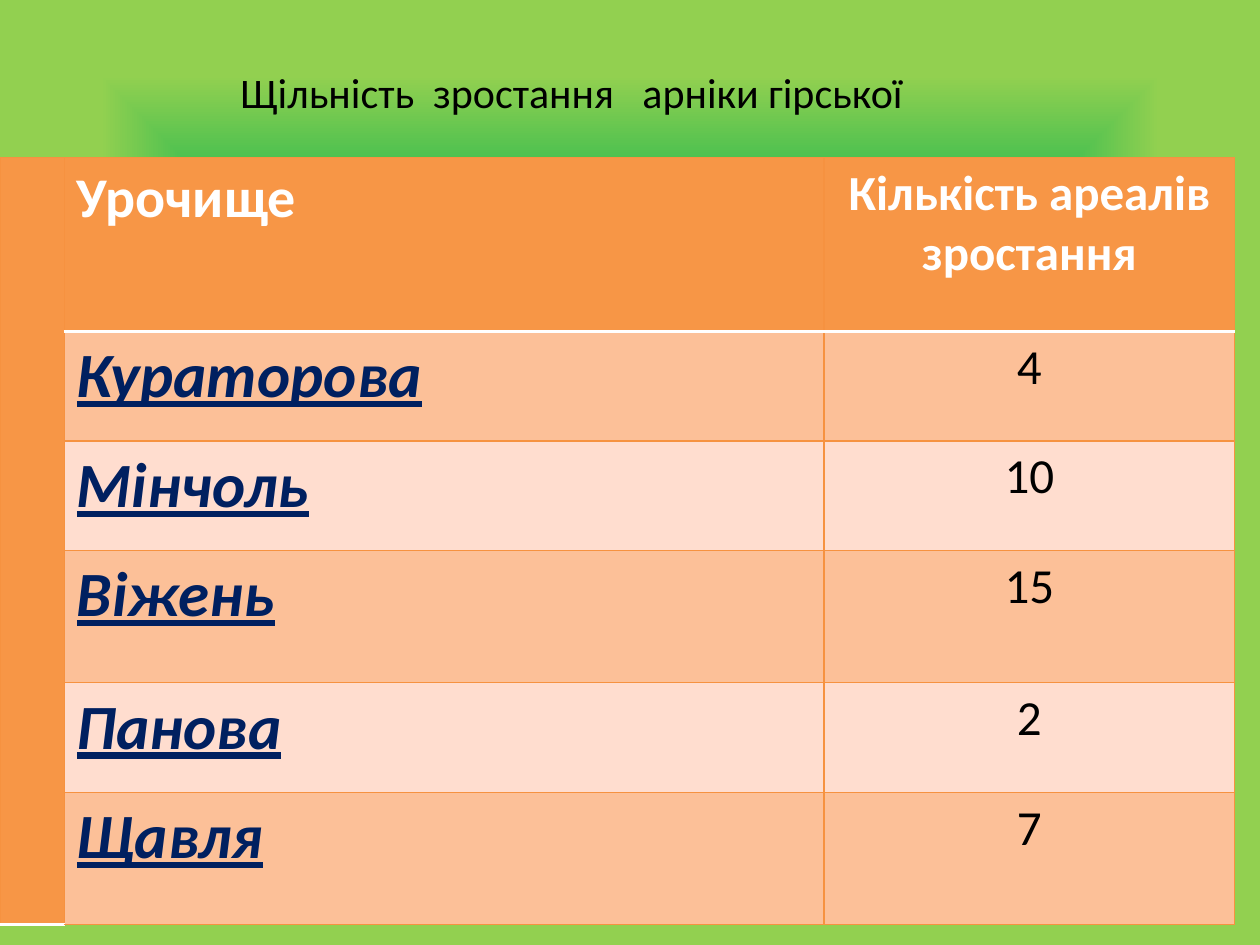
"""Build the slide with a table of mountain arnica habitats by locality."""
from pptx import Presentation
from pptx.dml.color import RGBColor
from pptx.enum.text import MSO_ANCHOR, PP_ALIGN
from pptx.oxml import parse_xml
from pptx.oxml.ns import nsdecls, qn
from pptx.util import Inches, Pt

COLORS = {
    "pale": "DDEBCF", "green": "00B050", "lime": "92D050",
    "orange": "F79646", "border": "F69240", "peach": "FCC098", "light": "FFDDCF",
    "white": "FFFFFF", "navy": "002060", "black": "000000",
}
HEADINGS = ["Урочище", "Кількість ареалів зростання"]
HABITATS = [("Кураторова", 4), ("Мінчоль", 10), ("Віжень", 15), ("Панова", 2), ("Щавля", 7)]
COLUMN_WIDTHS = [0.51, 6.03, 3.26]
ROW_HEIGHTS = [1.38, 0.87, 0.87, 1.05, 0.87, 1.05]
HEADING_FORMATS = [
    {"size": Pt(32), "bold": True, "italic": False, "underline": False},
    {"size": Pt(28), "bold": True, "italic": False, "underline": False},
]
BODY_FORMATS = [
    {"size": Pt(36), "bold": True, "italic": True, "underline": True},
    {"size": Pt(28), "bold": False, "italic": False, "underline": False},
]


def write(frame, text, color, align, formats):
    frame.text = text
    paragraph = frame.paragraphs[0]
    paragraph.alignment = align
    font = paragraph.runs[0].font
    font.name = "Calibri"
    font.color.rgb = RGBColor.from_string(COLORS[color])
    for attribute, value in formats.items():
        setattr(font, attribute, value)


def style_cell(cell, fill, borders):
    properties = cell._tc.get_or_add_tcPr()
    for side in "LRTB":
        color, width = borders.get(side, ("border", 0.75))
        properties.append(parse_xml(
            f'<a:ln{side} {nsdecls("a")} w="{Pt(width)}"><a:solidFill>'
            f'<a:srgbClr val="{COLORS[color]}"/></a:solidFill></a:ln{side}>'))
    cell.fill.solid()
    cell.fill.fore_color.rgb = RGBColor.from_string(COLORS[fill])


presentation = Presentation()
presentation.slide_width = Inches(10)
presentation.slide_height = Inches(7.5)
slide = presentation.slides.add_slide(presentation.slide_layouts[5])

slide.background.fill.solid()
plain_fill = slide.element.find(".//" + qn("p:bgPr")).find(qn("a:solidFill"))
stops = "".join(
    f'<a:gs pos="{position}000"><a:srgbClr val="{COLORS[color]}"/></a:gs>'
    for position, color in [(47, "pale"), (47, "green"), (84, "lime")])
plain_fill.getparent().replace(plain_fill, parse_xml(
    f'<a:gradFill {nsdecls("a")} rotWithShape="1"><a:gsLst>{stops}</a:gsLst>'
    '<a:path path="shape"><a:fillToRect l="50000" t="50000" r="50000" b="50000"/>'
    '</a:path></a:gradFill>'))

title = slide.shapes.title
title.left, title.top = Inches(0), Inches(0.3)
title.width, title.height = Inches(9), Inches(1.25)
title.text_frame.vertical_anchor = MSO_ANCHOR.MIDDLE
title.text_frame.margin_bottom = Inches(0.45)
write(title.text_frame, " Щільність  зростання   арніки гірської", "black",
      PP_ALIGN.CENTER, {"size": Pt(24)})

habitat_table = slide.shapes.add_table(
    len(ROW_HEIGHTS), len(COLUMN_WIDTHS), Inches(0), Inches(1.25),
    Inches(sum(COLUMN_WIDTHS)), Inches(sum(ROW_HEIGHTS))).table
for column, width in zip(habitat_table.columns, COLUMN_WIDTHS):
    column.width = Inches(width)
for row, height in zip(habitat_table.rows, ROW_HEIGHTS):
    row.height = Inches(height)

habitat_table.cell(0, 0).merge(habitat_table.cell(len(HABITATS), 0))
for row_index in range(len(ROW_HEIGHTS)):
    style_cell(habitat_table.cell(row_index, 0), "orange", {"B": ("white", 2)})

for row_index, values in enumerate([HEADINGS, *HABITATS]):
    is_heading = row_index == 0
    fill = "orange" if is_heading else ("light", "peach")[row_index % 2]
    borders = {0: {"B": ("white", 2)}, 1: {"T": ("white", 2)}}.get(row_index, {})
    text_colors = ["white", "white"] if is_heading else ["navy", "black"]
    formats = HEADING_FORMATS if is_heading else BODY_FORMATS
    for index, align in enumerate([PP_ALIGN.LEFT, PP_ALIGN.CENTER]):
        cell = habitat_table.cell(row_index, index + 1)
        style_cell(cell, fill, borders)
        write(cell.text_frame, str(values[index]), text_colors[index], align, formats[index])

presentation.save("out.pptx")
